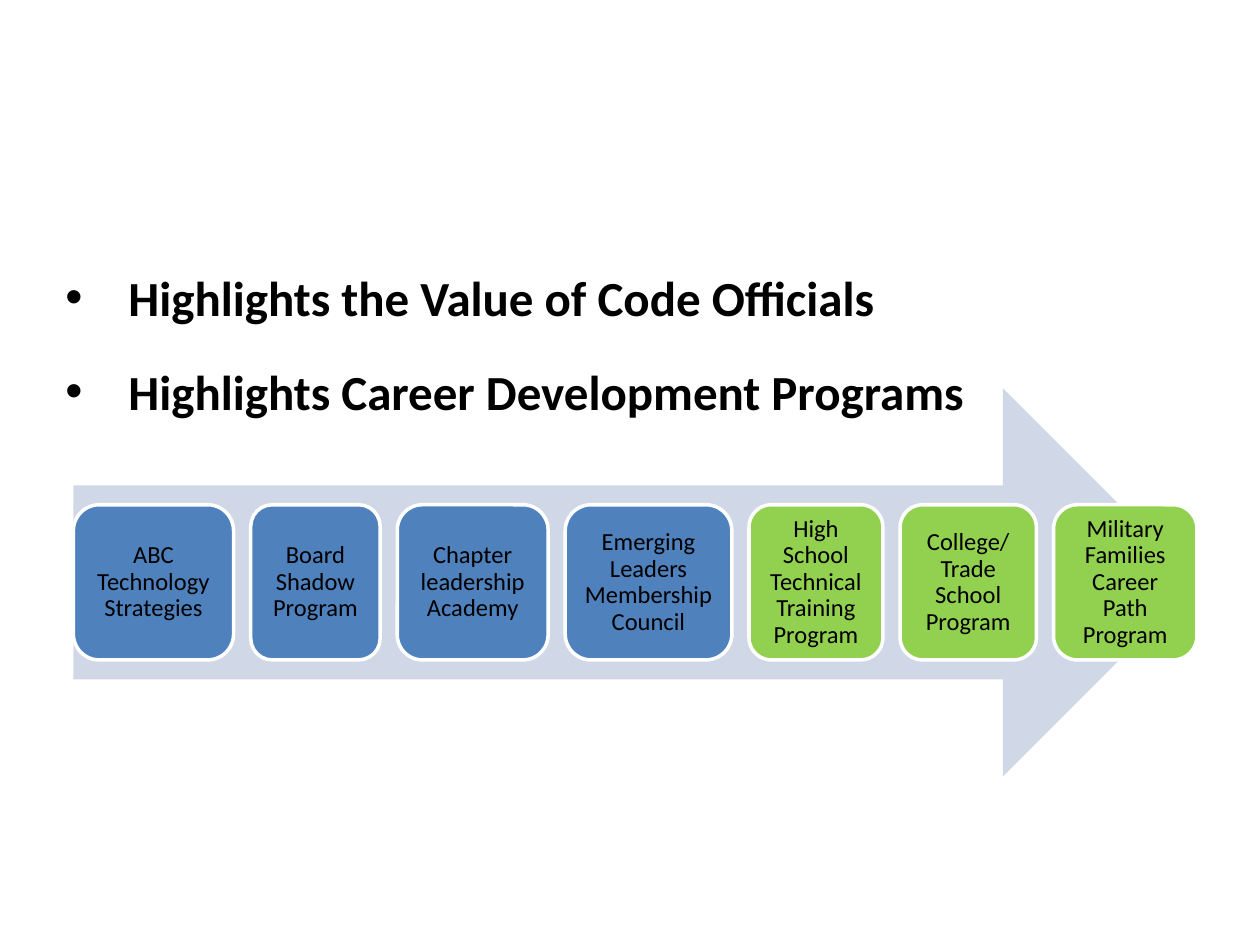
from lxml import etree
from pptx import Presentation
from pptx.dml.color import RGBColor
from pptx.enum import shapes as sh, text as tx
from pptx.oxml import ns
from pptx.util import Cm, Pt

BLUE, GREEN = "4F81BD", "92D050"
STEPS = [  # label, width in cm, fill
    ("ABC Technology Strategies", 3.23, BLUE),
    ("Board Shadow Program", 2.61, BLUE),
    ("Chapter leadership Academy", 3.04, BLUE),
    ("Emerging Leaders Membership Council", 3.36, BLUE),
    ("High School Technical Training Program", 2.7, GREEN),
    ("College/ Trade School Program", 2.75, GREEN),
    ("Military Families Career Path Program", 2.89, GREEN),
]
POINTS = ["Highlights the Value of Code Officials",
          "Highlights Career Development Programs"]


def color(code):
    return RGBColor.from_string(code)


def write(frame, words, size, bold=False, align=None, lead=None, bullet=None):
    frame.word_wrap = True
    para = frame.paragraphs[0]
    if bullet:
        props = para._p.get_or_add_pPr()
        props.set("marL", str(Cm(1.27)))
        props.set("indent", str(-Cm(1.27)))
        font = etree.SubElement(props, ns.qn("a:buFont"))
        font.set("typeface", "Arial")
        mark = etree.SubElement(props, ns.qn("a:buChar"))
        mark.set("char", bullet)
    if align is not None:
        para.alignment = align
    if lead:
        para.line_spacing = lead
    run = para.add_run()
    run.text = words
    run.font.name = "Calibri"
    run.font.size = Pt(size)
    run.font.bold = bold
    run.font.color.rgb = color("000000")


def shape(slide, kind, left, top, width, height, fill, line=None):
    item = slide.shapes.add_shape(kind, Cm(left), Cm(top), Cm(width), Cm(height))
    item.shadow.inherit = False
    item.fill.solid()
    item.fill.fore_color.rgb = color(fill)
    if line:
        item.line.color.rgb = color(line)
        item.line.width = Pt(2)
    else:
        item.line.fill.background()
    return item


def process(slide, left, top, width, height):
    """Draw an arrow with the steps spread evenly along its shaft."""
    kinds = sh.MSO_SHAPE
    shape(slide, kinds.RIGHT_ARROW, left, top, width, height, "D0D8E8")
    tall = height * 0.4
    gap = (width - sum(step[1] for step in STEPS)) / (len(STEPS) - 1)
    x = left
    for label, wide, fill in STEPS:
        card = shape(slide, kinds.ROUNDED_RECTANGLE, x, top + height * 0.3,
                     wide, tall, fill, "FFFFFF")
        frame = card.text_frame
        frame.margin_left = frame.margin_right = Cm(0.15)
        frame.margin_top = frame.margin_bottom = Cm(0.15)
        frame.vertical_anchor = tx.MSO_ANCHOR.MIDDLE
        write(frame, label, 14, align=tx.PP_ALIGN.CENTER, lead=0.9)
        x += wide + gap


def points(slide, left, top, width, pitch):
    for i, words in enumerate(POINTS):
        box = slide.shapes.add_textbox(Cm(left), Cm(top + i * pitch),
                                       Cm(width), Cm(1.45))
        write(box.text_frame, words, 28, bold=True, bullet="•")


def main():
    deck = Presentation()
    deck.slide_width, deck.slide_height = Cm(25.4), Cm(19.05)
    slide = deck.slides.add_slide(deck.slide_layouts[6])
    process(slide, left=1.48, top=7.83, width=22.65, height=7.82)
    points(slide, left=1.07, top=5.26, width=21.59, pitch=1.9)
    deck.save("out.pptx")


if __name__ == "__main__":
    main()
